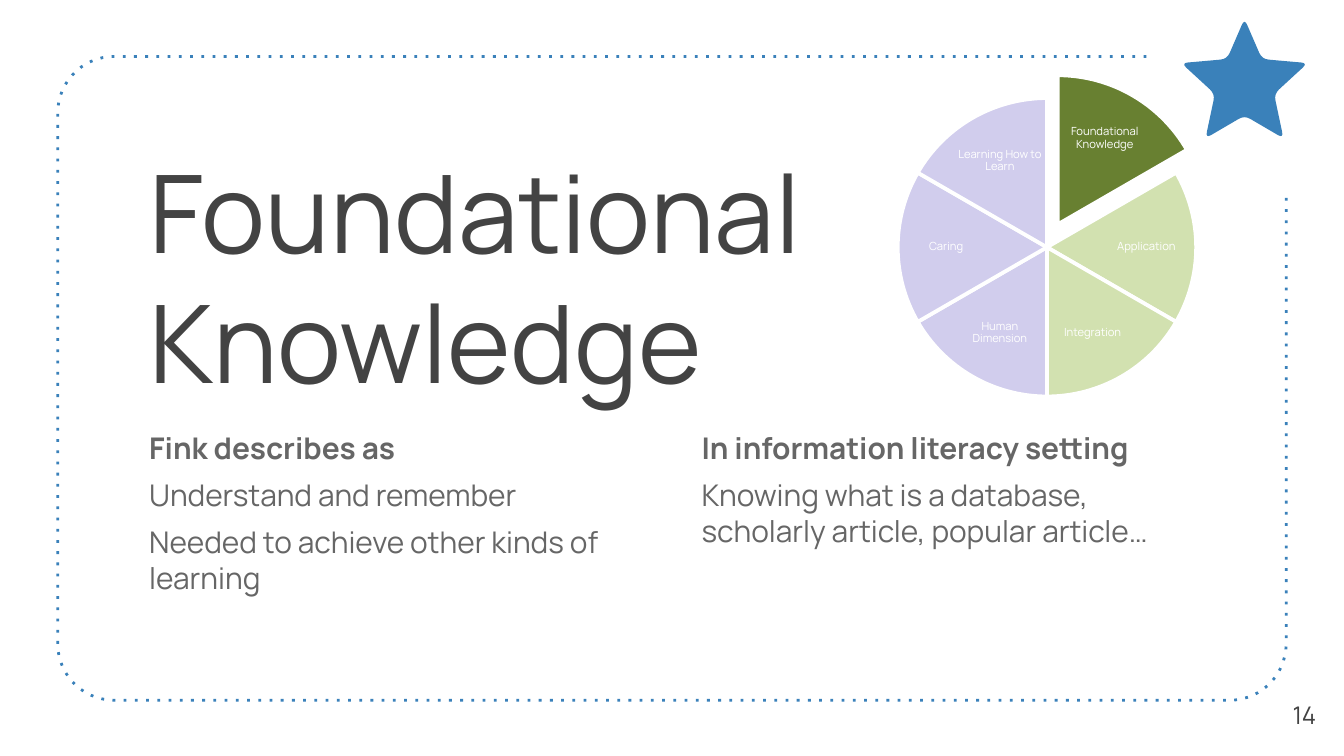
import math

from pptx import Presentation
from pptx.dml.color import RGBColor
from pptx.enum import dml, shapes, text
from pptx.oxml import ns
from pptx.util import Inches, Pt

FONT = "Manrope"
BLUE, DARK, GREY, WHITE = "3A81BA", "434343", "666666", "FFFFFF"
OLIVE, GREEN, LILAC = "688031", "D2E1B0", "D1CDED"


def rgb(value):
    return RGBColor.from_string(value)


def draw_outline(page, points, close):
    """Add a freeform through points given in inches."""
    corners = [(Inches(x), Inches(y)) for x, y in points]
    builder = page.shapes.build_freeform(*corners[0], scale=1.0)
    builder.add_line_segments(corners[1:], close=close)
    shape = builder.convert_to_shape()
    shape.shadow.inherit = False
    return shape


deck = Presentation()
deck.slide_width = Inches(10)
deck.slide_height = deck.slide_width * 9 // 16
page = deck.slides.add_slide(deck.slide_layouts.get_by_name("Two Content"))
title, left_body, right_body = page.placeholders

# Dotted frame, open at the top right corner
radius = 0.42
frame_points = [(8.53, 0.42)]
for center_x, center_y, start in ((0.85, 0.84, 270), (0.85, 4.79, 180), (9.15, 4.79, 90)):
    for step in range(16):
        angle = math.radians(start - 6 * step)
        frame_points.append((center_x + radius * math.cos(angle),
                             center_y + radius * math.sin(angle)))
frame_points += [(9.57, 4.79), (9.57, 1.46)]
frame = draw_outline(page, frame_points, close=False)
frame.fill.background()
frame.line.color.rgb = rgb(BLUE)
frame.line.width = Pt(1.5)
frame.line.dash_style = dml.MSO_LINE.ROUND_DOT
for dash in frame._element.iter(ns.qn("a:prstDash")):
    dash.set("val", "dot")

# Title and the two columns
title.left, title.top, title.width, title.height = map(Inches, (1.01, 0.98, 7.51, 0.94))
title.text = "Foundational Knowledge"
heading = title.text_frame.paragraphs[0]
heading.alignment = text.PP_ALIGN.LEFT
heading.font.size, heading.font.name = Pt(58), FONT
heading.font.color.rgb = rgb(DARK)

columns = (
    (left_body, 1.01, ["Fink describes as", "Understand and remember",
                       "Needed to achieve other kinds of learning"]),
    (right_body, 5.12, ["In information literacy setting",
                        "Knowing what is a database, scholarly article, popular article…"]),
)
for body, left, lines in columns:
    body.left, body.top, body.width, body.height = map(Inches, (left, 3.1, 3.88, 1.73))
    body.text_frame.text = "\n".join(lines)
    for index, para in enumerate(body.text_frame.paragraphs):
        para.space_before = Pt(6)
        para.font.size, para.font.name = Pt(16), FONT
        para.font.bold = index == 0
        para.font.color.rgb = rgb(GREY)
        properties = para._p.get_or_add_pPr()
        properties.set("marL", "0")
        properties.set("indent", "0")
        bullet = properties.makeelement(ns.qn("a:buNone"), {})
        properties.insert_element_before(bullet, "a:tabLst", "a:defRPr", "a:extLst")

for placeholder in (title, left_body, right_body):
    area = placeholder.text_frame
    area.auto_size = text.MSO_AUTO_SIZE.NONE
    area.vertical_anchor = text.MSO_ANCHOR.TOP
    area.margin_left = area.margin_right = area.margin_top = area.margin_bottom = Inches(0.1)

# Star: the right half is mirrored, then every corner is rounded
axis = 9.26
right_half = [(0.13, 0.44), (0.47, 0.47), (0.22, 0.7), (0.29, 1.03)]
star_corners = ([(axis, 0.14)] + [(axis + dx, y) for dx, y in right_half]
                + [(axis, 0.86)] + [(axis - dx, y) for dx, y in reversed(right_half)])
star_points = []
for index, corner in enumerate(star_corners):
    ends = []
    for neighbor in (star_corners[index - 1], star_corners[(index + 1) % len(star_corners)]):
        share = 0.05 / math.dist(corner, neighbor)
        ends.append([c + share * (n - c) for c, n in zip(corner, neighbor)])
    for t in (0, 0.25, 0.5, 0.75, 1):
        star_points.append([(1 - t) ** 2 * a + 2 * t * (1 - t) * c + t ** 2 * b
                            for a, c, b in zip(ends[0], corner, ends[1])])
star = draw_outline(page, star_points, close=True)
star.fill.solid()
star.fill.fore_color.rgb = rgb(BLUE)
star.line.fill.background()

# Wheel of six slices, clockwise from the top, the first one pulled out
wheel = page.shapes.add_group_shape()
slices = (
    ("Foundational Knowledge", OLIVE, 6.76, 0.56, 8.22, 1.03),
    ("Application", GREEN, 6.68, 0.73, 8.53, 1.84),
    ("Integration", GREEN, 6.68, 0.73, 8.13, 2.48),
    ("Human Dimension", LILAC, 6.68, 0.73, 7.44, 2.48),
    ("Caring", LILAC, 6.68, 0.73, 7.04, 1.84),
    ("Learning How to Learn", LILAC, 6.68, 0.73, 7.44, 1.2),
)
label_width, label_height = 0.66, 0.46
for index, (name, color, left, top, label_x, label_y) in enumerate(slices):
    wedge = wheel.shapes.add_shape(shapes.MSO_SHAPE.PIE, Inches(left), Inches(top),
                                   Inches(2.22), Inches(2.22))
    start = 270 + 60 * index
    for side in (0, 1):  # an adjustment of 0.6 is one degree
        wedge.adjustments[side] = (start + 60 * side) % 360 * 0.6
    wedge.shadow.inherit = False
    wedge.fill.solid()
    wedge.fill.fore_color.rgb = rgb(color)
    wedge.line.color.rgb = rgb(WHITE)
    wedge.line.width = Pt(2)

    label = wheel.shapes.add_textbox(
        Inches(label_x - label_width / 2), Inches(label_y - label_height / 2),
        Inches(label_width), Inches(label_height))
    area = label.text_frame
    area.word_wrap = True
    area.vertical_anchor = text.MSO_ANCHOR.MIDDLE
    area.margin_left = area.margin_right = area.margin_top = area.margin_bottom = Inches(0.01)
    area.text = name
    para = area.paragraphs[0]
    para.alignment = text.PP_ALIGN.CENTER
    para.line_spacing = 0.9
    para.font.size, para.font.name = Pt(6), FONT
    para.font.color.rgb = rgb(WHITE)

# Page number
number = page.shapes.add_textbox(Inches(9.41), Inches(5.02), Inches(0.59), Inches(0.6))
number.text_frame.word_wrap = True
number.text_frame.vertical_anchor = text.MSO_ANCHOR.MIDDLE
number.text_frame.text = "14"
para = number.text_frame.paragraphs[0]
para.alignment = text.PP_ALIGN.CENTER
para.font.size, para.font.name = Pt(13), FONT
para.font.color.rgb = rgb(DARK)

deck.save("out.pptx")
